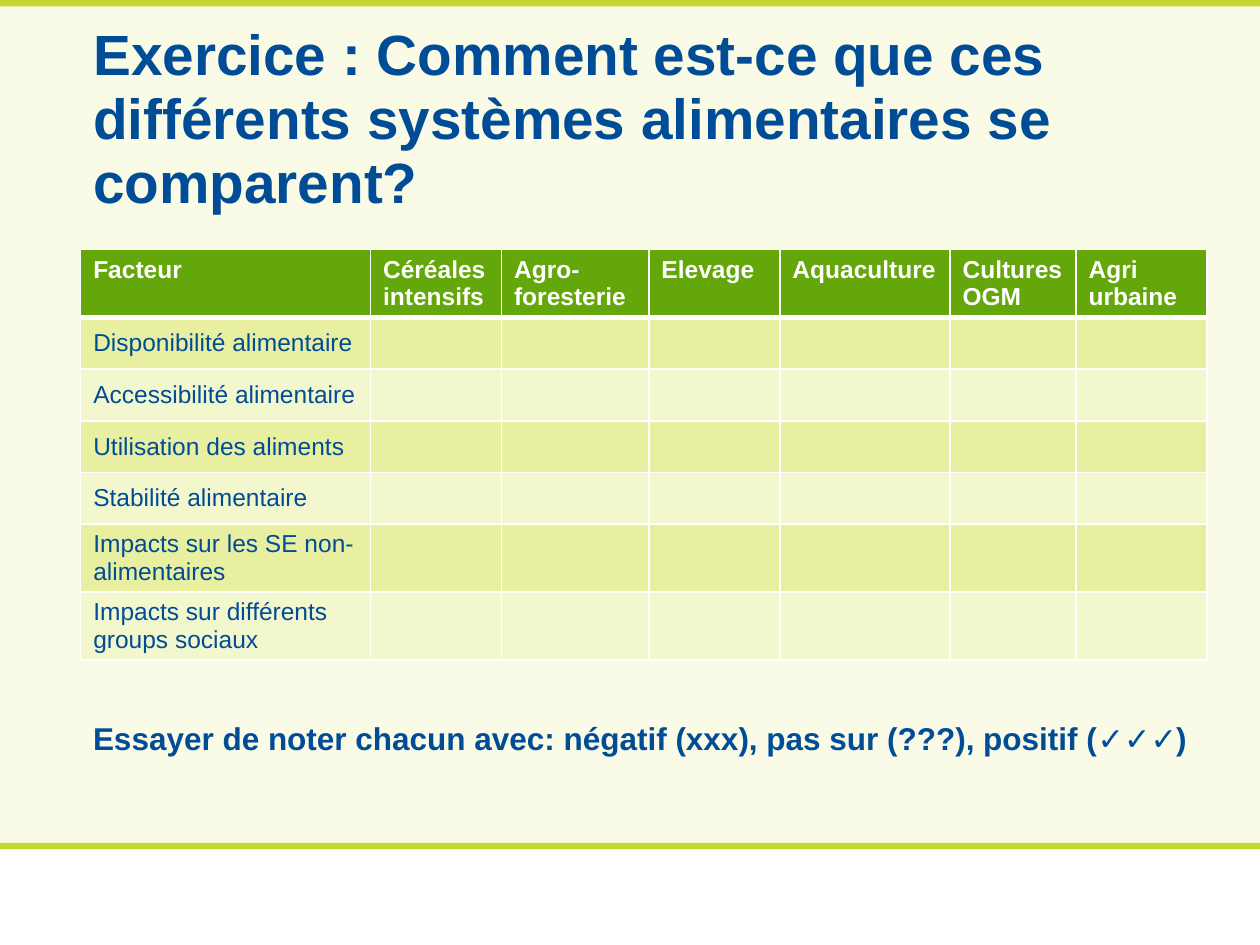
"""Builds a slide with a grid for comparing food systems."""
from lxml.etree import SubElement
from pptx import Presentation
from pptx.dml.color import RGBColor
from pptx.enum.shapes import MSO_SHAPE
from pptx.enum.text import MSO_ANCHOR, MSO_AUTO_SIZE, PP_ALIGN
from pptx.oxml.ns import qn
from pptx.util import Inches, Pt


class Theme:
    font = "Arial"
    blue = RGBColor(0x00, 0x4C, 0x96)
    white = RGBColor(0xFF, 0xFF, 0xFF)
    green = RGBColor(0x64, 0xA7, 0x0B)
    lime = RGBColor(0xC3, 0xD6, 0x00)
    rule = RGBColor(0xC3, 0xD6, 0x31)
    cream = RGBColor(0xF9, 0xFB, 0xE6)
    title = Pt(32.4)
    note = Pt(18)
    cell = Pt(14)


def style(para, size, color, bold):
    font = para.font
    font.name, font.size, font.bold = Theme.font, size, bold
    font.color.rgb = color


def border(props, side, width):
    line = SubElement(props, qn(f"a:ln{side}"), w=str(Pt(width)))
    fill = SubElement(line, qn("a:solidFill"))
    SubElement(fill, qn("a:srgbClr"), val=str(Theme.white))


deck = Presentation()
deck.slide_width, deck.slide_height = Inches(10), Inches(7.5)
slide = deck.slides.add_slide(deck.slide_layouts[5])
back = slide.background.fill
back.solid()
back.fore_color.rgb = Theme.cream

bands = [(6.74, 0.76, Theme.white), (6.69, 0.05, Theme.rule), (0, 0.05, Theme.rule)]
for top, height, color in bands:
    band = slide.shapes.add_shape(
        MSO_SHAPE.RECTANGLE, 0, Inches(top), Inches(10), Inches(height))
    band.shadow.inherit = False
    band.fill.solid()
    band.fill.fore_color.rgb = color
    band.line.fill.background()

title = slide.shapes.title
title.left, title.top = Inches(0.64), Inches(0.23)
title.width, title.height = Inches(8.92), Inches(1.45)
frame = title.text_frame
frame.text = "Exercice\u00a0: Comment est-ce que ces différents systèmes alimentaires se comparent?"
frame.auto_size = MSO_AUTO_SIZE.NONE
frame.vertical_anchor = MSO_ANCHOR.MIDDLE
para = frame.paragraphs[0]
para.alignment = PP_ALIGN.LEFT
para.line_spacing = 0.94
style(para, Theme.title, Theme.blue, True)

heads = ["Facteur", "Céréales intensifs", "Agro-foresterie", "Elevage",
         "Aquaculture", "Cultures OGM", "Agri urbaine"]
factors = ["Disponibilité alimentaire", "Accessibilité alimentaire",
           "Utilisation des aliments", "Stabilité alimentaire",
           "Impacts sur les SE non-alimentaires",
           "Impacts sur différents groups sociaux"]
widths = [2.3, 1.04, 1.17, 1.04, 1.35, 1, 1.04]
heights = [0.54] + [0.41] * 4 + [0.54] * 2
grid = slide.shapes.add_table(
    len(heights), len(widths), Inches(0.64), Inches(1.98),
    Inches(sum(widths)), Inches(sum(heights))).table
for col, width in zip(grid.columns, widths):
    col.width = Inches(width)
for row, height in zip(grid.rows, heights):
    row.height = Inches(height)

rows = [heads] + [[name] + [""] * (len(heads) - 1) for name in factors]
for r, row in enumerate(rows):
    head = r == 0
    for c, text in enumerate(row):
        cell = grid.cell(r, c)
        props = cell._tc.get_or_add_tcPr()
        for side in "LRTB" if head else "LRB":
            border(props, side, 3 if head and side == "B" else 1)
        cell.fill.solid()
        cell.fill.fore_color.rgb = Theme.green if head else Theme.lime
        if not head:
            tint = props.find(qn("a:solidFill")).find(qn("a:srgbClr"))
            SubElement(tint, qn("a:alpha"), val="30000" if r % 2 else "10000")
            cell.vertical_anchor = MSO_ANCHOR.MIDDLE
        cell.text = text
        style(cell.text_frame.paragraphs[0], Theme.cell,
              Theme.white if head else Theme.blue, head)

note = slide.shapes.add_textbox(Inches(0.64), Inches(5.66), Inches(8.94), Inches(0.4))
frame = note.text_frame
frame.word_wrap = True
frame.text = "Essayer de noter chacun avec: négatif (xxx), pas sur (???), positif (✓✓✓)"
style(frame.paragraphs[0], Theme.note, Theme.blue, True)

deck.save("out.pptx")
